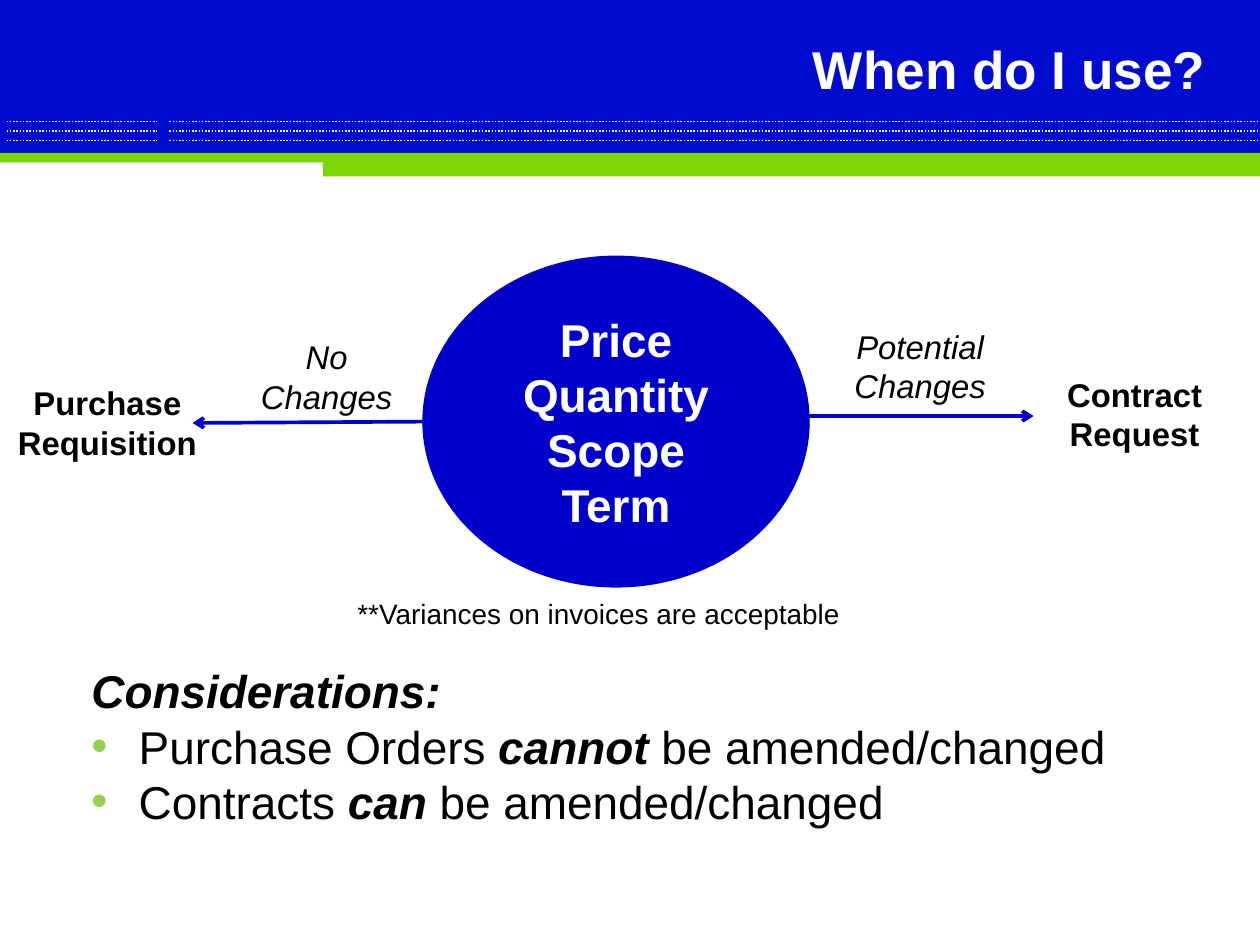
from pptx import Presentation
from pptx.dml.color import RGBColor
from pptx.enum.dml import MSO_LINE
from pptx.enum.shapes import MSO_CONNECTOR, MSO_SHAPE
from pptx.enum.text import MSO_ANCHOR, PP_ALIGN
from pptx.oxml.ns import qn
from pptx.util import Pt
from lxml.etree import SubElement

WIDTH, HEIGHT = 768, 576
BANNER, GREEN, BLUE = "020CCE", "7DD503", "0000CC"
WHITE, BLACK, BULLET = "FFFFFF", "000000", "92D050"


def rgb(color):
    return RGBColor.from_string(color)


def add_shape(s, kind, x, y, w, h, color):
    sp = s.shapes.add_shape(kind, Pt(x), Pt(y), Pt(w), Pt(h))
    sp.shadow.inherit = False
    sp.fill.solid()
    sp.fill.fore_color.rgb = rgb(color)
    sp.line.fill.background()
    return sp


def add_line(s, x1, y1, x2, y2, color, width, dash=None, arrow=False):
    line = s.shapes.add_connector(MSO_CONNECTOR.STRAIGHT, Pt(x1), Pt(y1), Pt(x2), Pt(y2))
    line.line.color.rgb = rgb(color)
    line.line.width = Pt(width)
    if dash:
        line.line.dash_style = dash
    if arrow:
        SubElement(line.line._get_or_add_ln(), qn("a:tailEnd"), type="arrow")
    SubElement(line._element.spPr, qn("a:effectLst"))


def add_bullet(p, color):
    pPr = p._p.get_or_add_pPr()
    pPr.set("marL", str(Pt(28.8)))
    pPr.set("indent", str(-Pt(28.8)))
    SubElement(SubElement(pPr, qn("a:buClr")), qn("a:srgbClr"), val=color)
    SubElement(pPr, qn("a:buFont"), typeface="Arial")
    SubElement(pPr, qn("a:buChar"), char="•")


def write(sp, paragraphs, size, color=BLACK, bold=False, italic=False,
          align=PP_ALIGN.LEFT, anchor=MSO_ANCHOR.TOP, bullets_from=None):
    """Fill a shape; each paragraph is a string or a list of (text, emphasized) runs."""
    tf = sp.text_frame
    tf.word_wrap = True
    tf.vertical_anchor = anchor
    tf.margin_left = tf.margin_right = Pt(7.6)
    tf.margin_top = tf.margin_bottom = Pt(3.8)
    for i, runs in enumerate(paragraphs):
        p = tf.add_paragraph() if i else tf.paragraphs[0]
        p.alignment = align
        if bullets_from is not None and i >= bullets_from:
            add_bullet(p, BULLET)
        for text, emphasized in [(runs, False)] if isinstance(runs, str) else runs:
            r = p.add_run()
            r.text = text
            r.font.name = "Arial"
            r.font.size = Pt(size)
            r.font.bold = bold or emphasized
            r.font.italic = italic or emphasized
            r.font.color.rgb = rgb(color)


def add_text(s, x, y, w, h, paragraphs, size, **fmt):
    write(s.shapes.add_textbox(Pt(x), Pt(y), Pt(w), Pt(h)), paragraphs, size, **fmt)


def add_banner(s):
    add_shape(s, MSO_SHAPE.RECTANGLE, 0, 0, WIDTH, 96, BANNER)
    for row in range(3):
        y = 74.1 + 5.8 * row
        add_line(s, 0, y, WIDTH, y, WHITE, 1, dash=MSO_LINE.ROUND_DOT)
    add_shape(s, MSO_SHAPE.RECTANGLE, 0, 93.2, WIDTH, 5.8, GREEN)
    add_shape(s, MSO_SHAPE.RECTANGLE, 196.8, 95.3, WIDTH - 196.8, 12.2, GREEN)
    for x, width in ((0, 3.6), (95.8, 6.6)):  # gaps in the dotted rows
        add_shape(s, MSO_SHAPE.RECTANGLE, x, 0, width, 89.3, BANNER)
    add_text(s, 211, 19.4, 531.4, 44.6, ["When do I use?"], 32.4, color=WHITE,
             bold=True, align=PP_ALIGN.RIGHT, anchor=MSO_ANCHOR.MIDDLE)


def add_decision(s):
    factors = add_shape(s, MSO_SHAPE.OVAL, 257.8, 156.2, 235.4, 201.6, BLUE)
    factors.line.color.rgb = rgb(BLUE)
    factors.line.width = Pt(0.75)
    write(factors, ["Price", "Quantity", "Scope", "Term"], 28, color=WHITE,
          bold=True, align=PP_ALIGN.CENTER, anchor=MSO_ANCHOR.MIDDLE)
    add_line(s, 257.8, 257, 117.4, 257.8, BLUE, 2.25, arrow=True)
    add_line(s, 493.2, 253.6, 630, 253.6, BLUE, 2.25, arrow=True)

    for x, y, w, text in ((139, 201.6, 120.2, "No Changes"),
                          (504, 195.1, 113.8, "Potential Changes")):
        add_text(s, x, y, w, 56.2, [text], 20, italic=True, align=PP_ALIGN.CENTER)
    for x, y, w, text in ((630, 224.6, 123.1, "Contract Request"),
                          (0, 229.7, 131, "Purchase Requisition")):
        add_text(s, x, y, w, 56.2, [text], 20, bold=True, align=PP_ALIGN.CENTER)
    add_text(s, 210.2, 360, 365.8, 28.1, ["**Variances on invoices are acceptable"], 17)


def add_considerations(s):
    add_text(s, 48.2, 400.3, 659.5, 109.4, [
        [("Considerations:", True)],
        [("Purchase Orders ", False), ("cannot", True), (" be amended/changed", False)],
        [("Contracts", False), (" can", True), (" be amended/changed", False)],
    ], 28, bullets_from=1)


def main():
    prs = Presentation()
    prs.slide_width, prs.slide_height = Pt(WIDTH), Pt(HEIGHT)
    s = prs.slides.add_slide(prs.slide_layouts[6])
    add_banner(s)
    add_decision(s)
    add_considerations(s)
    prs.save("out.pptx")


if __name__ == "__main__":
    main()
